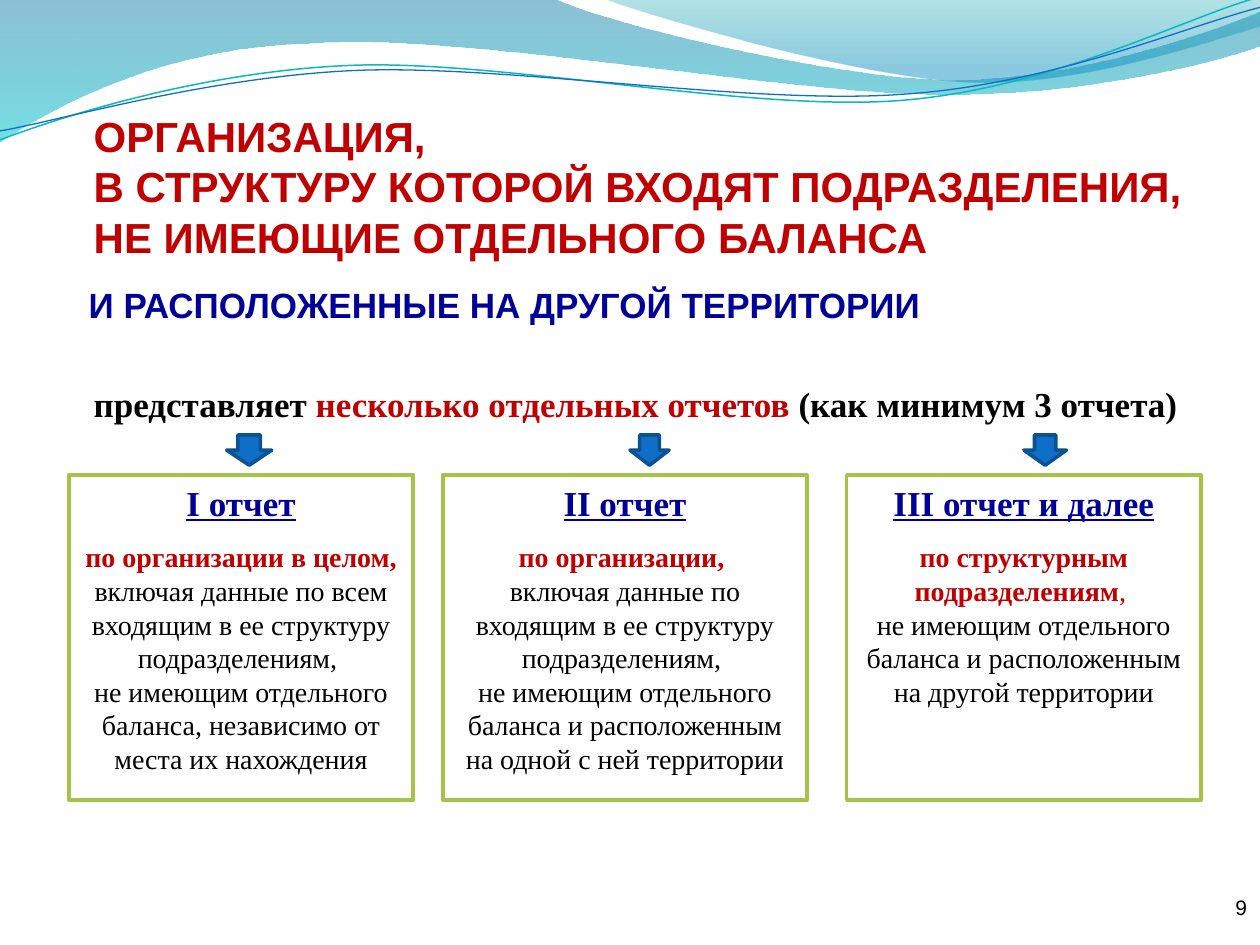
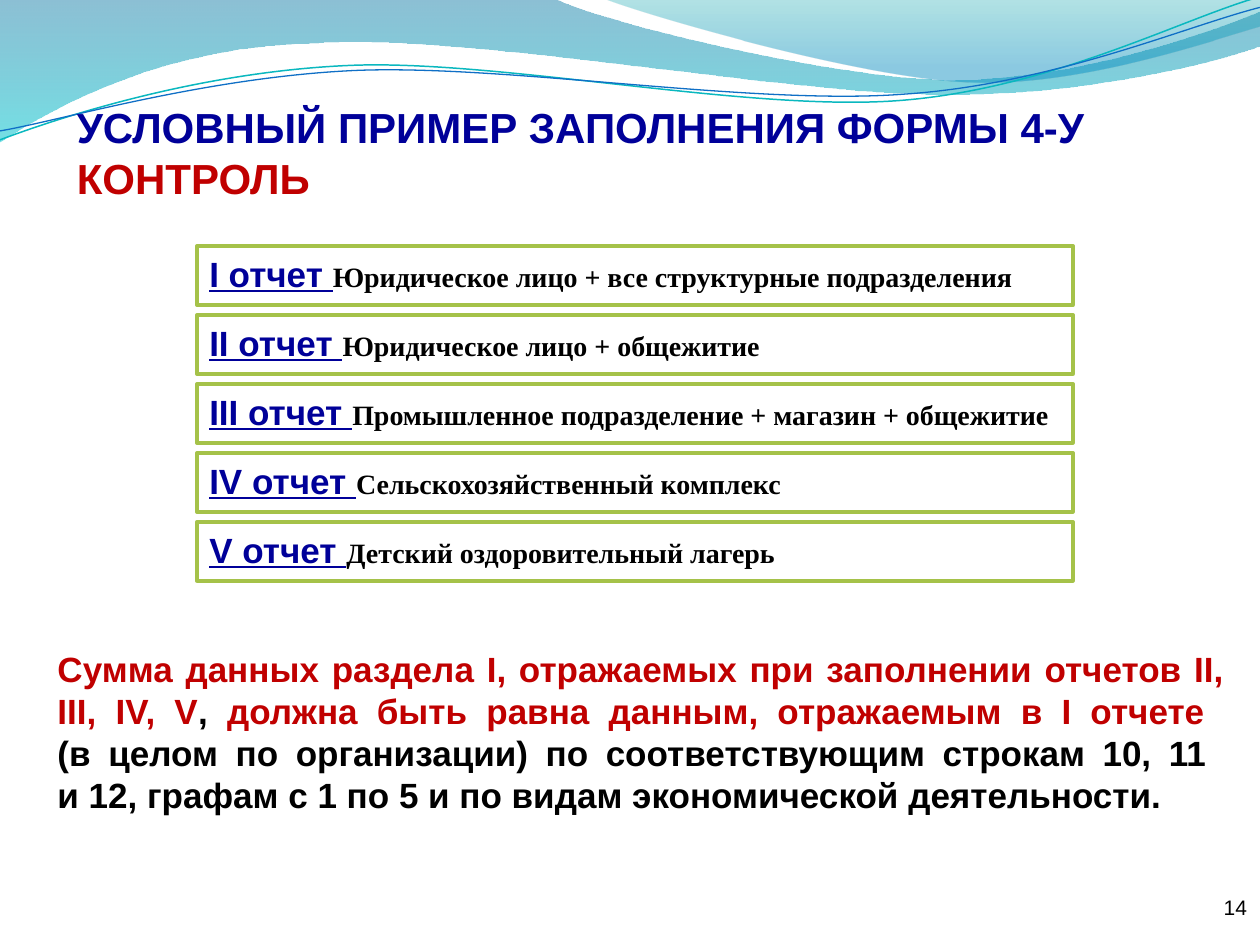
from dataclasses import dataclass
from typing import NamedTuple, Optional

from lxml import etree
from pptx import Presentation
from pptx import util as u
from pptx.dml.color import RGBColor
from pptx.enum import shapes, text
from pptx.oxml import ns


@dataclass(frozen=True)
class Theme:
    red: str = "C00000"
    navy: str = "000099"
    black: str = "000000"
    white: str = "FFFFFF"
    green: str = "A5C249"
    blue: str = "0F6FC6"
    dark_blue: str = "0B5292"
    teal: str = "0AB8BF"
    sans: str = "Arial"
    serif: str = "Times New Roman"
    title: int = 24
    lead: int = 20
    body: int = 16
    number: int = 12
    border: float = 2


T = Theme()


class Box(NamedTuple):
    x: float
    y: float
    w: float
    h: float


class Stop(NamedTuple):
    pos: float
    color: str
    alpha: int


class Wave(NamedTuple):
    start: tuple
    segments: list
    stops: tuple = ()
    line: Optional[str] = None
    width: float = 0


class Report(NamedTuple):
    box: Box
    arrow: Box
    heading: str
    scope: str
    tail: str
    details: str


WAVES = [
    Wave((0, 0), [
        (11.18, -0.03),
        (12.09, 0.43, 16.87, 1.6, 19.25, 1.6),
        (21.67, 1.6, 24.33, 0.66, 25.4, 0.23),
        (25.43, 0.91),
        (24.97, 1.12, 22.1, 1.93, 18.95, 1.9),
        (15.8, 1.9, 9.7, 0.71, 6.53, 0.86),
        (3.28, 0.91, 1.17, 2.11, -0.03, 2.87),
    ], stops=(Stop(0, "0074A1", 45), Stop(1, "00C6CF", 55))),
    Wave((12.17, -0.03), [
        (12.93, 0.28, 17.32, 1.57, 19.53, 1.65),
        (21.74, 1.75, 24.41, 0.81, 25.4, 0.53),
        (25.4, 0),
    ], stops=(Stop(0, "00A1A9", 30), Stop(0.8, "008BBF", 45))),
    Wave((0, 2.82), [
        (1.22, 2.36, 4.01, 1.45, 7.04, 1.32),
        (10.03, 1.19, 15.06, 2.26, 18.11, 2.03),
        (21.16, 1.8, 23.83, 0.38, 25.35, -0.05),
    ], line=T.teal, width=0.85),
    Wave((0, 2.64), [
        (1.19, 2.44, 4.17, 1.55, 7.19, 1.42),
        (10.24, 1.3, 15.16, 2.13, 18.21, 1.9),
        (21.23, 1.7, 23.9, 0.53, 25.4, 0.15),
    ], line=T.blue, width=0.75),
]

REPORTS = [
    Report(Box(1.39, 9.58, 6.94, 6.55), Box(4.57, 8.77, 0.91, 0.61),
           "I отчет", "по организации в целом, ", "",
           "включая данные по всем входящим в ее структуру подразделениям, \n"
           "не имеющим отдельного баланса, независимо от места их нахождения"),
    Report(Box(8.93, 9.58, 7.34, 6.55), Box(12.7, 8.77, 0.79, 0.61),
           "II отчет", "по организации, \n", "",
           "включая данные по входящим в ее структуру подразделениям, \n"
           "не имеющим отдельного баланса и расположенным на одной с ней территории"),
    Report(Box(17.07, 9.58, 7.14, 6.55), Box(20.64, 8.77, 0.86, 0.61),
           "III отчет и далее", "по структурным подразделениям", ", \n",
           "не имеющим отдельного баланса и расположенным на другой территории"),
]

EXAMPLE_ROWS = [
    ("I отчет ", "Юридическое лицо + все структурные подразделения"),
    ("II отчет ", "Юридическое лицо + общежитие"),
    ("III отчет ", "Промышленное подразделение + магазин + общежитие"),
    ("IV отчет ", "Сельскохозяйственный комплекс"),
    ("V отчет ", "Детский оздоровительный лагерь"),
]
FIRST_ROW = Box(3.97, 4.96, 17.66, 1.19)
ROW_STEP = 1.39


def rgb(color: str) -> RGBColor:
    return RGBColor.from_string(color)


def cm(box: Box) -> list:
    return [u.Cm(v) for v in box]


def write(p, content: str, *, size: int, color: str = T.black, font: str = T.sans,
          bold: bool = True, underline: bool = False) -> None:
    for i, part in enumerate(content.split("\n")):
        if i:
            p.add_line_break()
        if part:
            r = p.add_run()
            r.text = part
            f = r.font
            f.size, f.name, f.bold, f.underline = u.Pt(size), font, bold, underline
            f.color.rgb = rgb(color)


def first_paragraph(sp, align=text.PP_ALIGN.LEFT, anchor=text.MSO_ANCHOR.TOP):
    tf = sp.text_frame
    tf.word_wrap = True
    tf.vertical_anchor = anchor
    p = tf.paragraphs[0]
    p.alignment = align
    return p


def add_text(slide, box: Box, **layout):
    return first_paragraph(slide.shapes.add_textbox(*cm(box)), **layout)


def add_shape(slide, kind, box: Box, fill: str, line: str):
    sp = slide.shapes.add_shape(kind, *cm(box))
    sp.shadow.inherit = False
    sp.fill.solid()
    sp.fill.fore_color.rgb = rgb(fill)
    sp.line.color.rgb = rgb(line)
    sp.line.width = u.Pt(T.border)
    return sp


def add_frame(slide, box: Box):
    return add_shape(slide, shapes.MSO_SHAPE.FLOWCHART_PROCESS, box, T.white, T.green)


def bend(sp, segments: list) -> None:
    edges = list(sp._element.spPr.iter(ns.qn("a:lnTo")))
    for edge, seg in zip(edges, segments):
        if len(seg) == 2:
            continue
        curve = etree.Element(ns.qn("a:cubicBezTo"))
        for x, y in zip(seg[::2], seg[1::2]):
            pt = etree.SubElement(curve, ns.qn("a:pt"))
            pt.set("x", str(u.Cm(x) - sp.left))
            pt.set("y", str(u.Cm(y) - sp.top))
        edge.getparent().replace(edge, curve)


def add_wave(slide, wave: Wave) -> None:
    x, y = wave.start
    builder = slide.shapes.build_freeform(u.Cm(x), u.Cm(y), scale=1.0)
    ends = [(u.Cm(seg[-2]), u.Cm(seg[-1])) for seg in wave.segments]
    builder.add_line_segments(ends, close=bool(wave.stops))
    sp = builder.convert_to_shape()
    bend(sp, wave.segments)
    sp.shadow.inherit = False
    if wave.line:
        sp.fill.background()
        sp.line.color.rgb = rgb(wave.line)
        sp.line.width = u.Pt(wave.width)
        return
    sp.fill.gradient()
    sp.fill.gradient_angle = 270
    for stop, shade in zip(sp.fill.gradient_stops, wave.stops):
        stop.position = shade.pos
        stop.color.rgb = rgb(shade.color)
    colors = list(sp._element.spPr.iter(ns.qn("a:srgbClr")))
    for element, shade in zip(colors, wave.stops):
        etree.SubElement(element, ns.qn("a:alpha")).set("val", str(shade.alpha * 1000))
    sp.line.fill.background()


def new_slide(prs, number: int):
    slide = prs.slides.add_slide(prs.slide_layouts[6])
    for wave in WAVES:
        add_wave(slide, wave)
    sp = slide.shapes.add_textbox(*cm(Box(23.04, 17.53, 2.1, 1.02)))
    tf = sp.text_frame
    tf.margin_left = tf.margin_right = tf.margin_top = tf.margin_bottom = 0
    p = first_paragraph(sp, text.PP_ALIGN.RIGHT, text.MSO_ANCHOR.BOTTOM)
    write(p, str(number), size=T.number, bold=False)
    return slide


def add_report(slide, report: Report) -> None:
    sp = add_frame(slide, report.box)
    p = first_paragraph(sp, text.PP_ALIGN.CENTER)
    write(p, report.heading, size=T.lead, color=T.navy, font=T.serif, underline=True)
    p = sp.text_frame.add_paragraph()
    p.alignment = text.PP_ALIGN.CENTER
    p.space_before = u.Pt(9.5)
    write(p, report.scope, size=T.body, color=T.red, font=T.serif)
    write(p, report.tail, size=T.body, color=T.red, font=T.serif, bold=False)
    write(p, report.details, size=T.body, font=T.serif, bold=False)


def build_reports_slide(prs) -> None:
    slide = new_slide(prs, 9)
    for report in REPORTS:
        add_report(slide, report)
    for report in REPORTS:
        add_shape(slide, shapes.MSO_SHAPE.DOWN_ARROW, report.arrow, T.blue, T.dark_blue)
    write(add_text(slide, Box(1.64, 2.1, 23.47, 3.58)),
          "ОРГАНИЗАЦИЯ, \nВ СТРУКТУРУ КОТОРОЙ ВХОДЯТ ПОДРАЗДЕЛЕНИЯ, \n"
          "НЕ ИМЕЮЩИЕ ОТДЕЛЬНОГО БАЛАНСА", size=T.title, color=T.red)
    write(add_text(slide, Box(1.54, 5.59, 22.81, 1.12)),
          "И РАСПОЛОЖЕННЫЕ НА ДРУГОЙ ТЕРРИТОРИИ", size=T.lead, color=T.navy)
    p = add_text(slide, Box(1.64, 7.59, 22.63, 1.09))
    write(p, "представляет ", size=T.lead, font=T.serif)
    write(p, "несколько отдельных отчетов ", size=T.lead, color=T.red, font=T.serif)
    write(p, "(как минимум 3 отчета)", size=T.lead, font=T.serif)


def build_example_slide(prs) -> None:
    slide = new_slide(prs, 14)
    for i, (name, units) in enumerate(EXAMPLE_ROWS):
        p = first_paragraph(add_frame(slide, FIRST_ROW._replace(y=FIRST_ROW.y + i * ROW_STEP)))
        write(p, name, size=T.lead, color=T.navy, underline=True)
        write(p, units, size=T.body, font=T.serif)
    p = add_text(slide, Box(1.3, 1.93, 22.23, 2.39))
    write(p, "УСЛОВНЫЙ ПРИМЕР ЗАПОЛНЕНИЯ ФОРМЫ 4-У ", size=T.title, color=T.navy)
    write(p, "КОНТРОЛЬ", size=T.title, color=T.red)
    p = add_text(slide, Box(0.91, 12.93, 24.02, 3.68), align=text.PP_ALIGN.JUSTIFY)
    p.space_before = u.Pt(12)
    write(p, "Сумма данных раздела I, отражаемых при заполнении отчетов II, III, IV, V",
          size=T.lead, color=T.red)
    write(p, ", ", size=T.lead)
    write(p, "должна быть равна данным, отражаемым в I отчете \n", size=T.lead, color=T.red)
    write(p, "(в целом по организации) по соответствующим строкам 10, 11 \n"
          "и 12, графам с 1 по 5 и по видам экономической деятельности.", size=T.lead)


def main() -> None:
    prs = Presentation()
    prs.slide_width, prs.slide_height = u.Cm(25.4), u.Cm(19.05)
    build_reports_slide(prs)
    build_example_slide(prs)
    prs.save("out.pptx")


if __name__ == "__main__":
    main()
